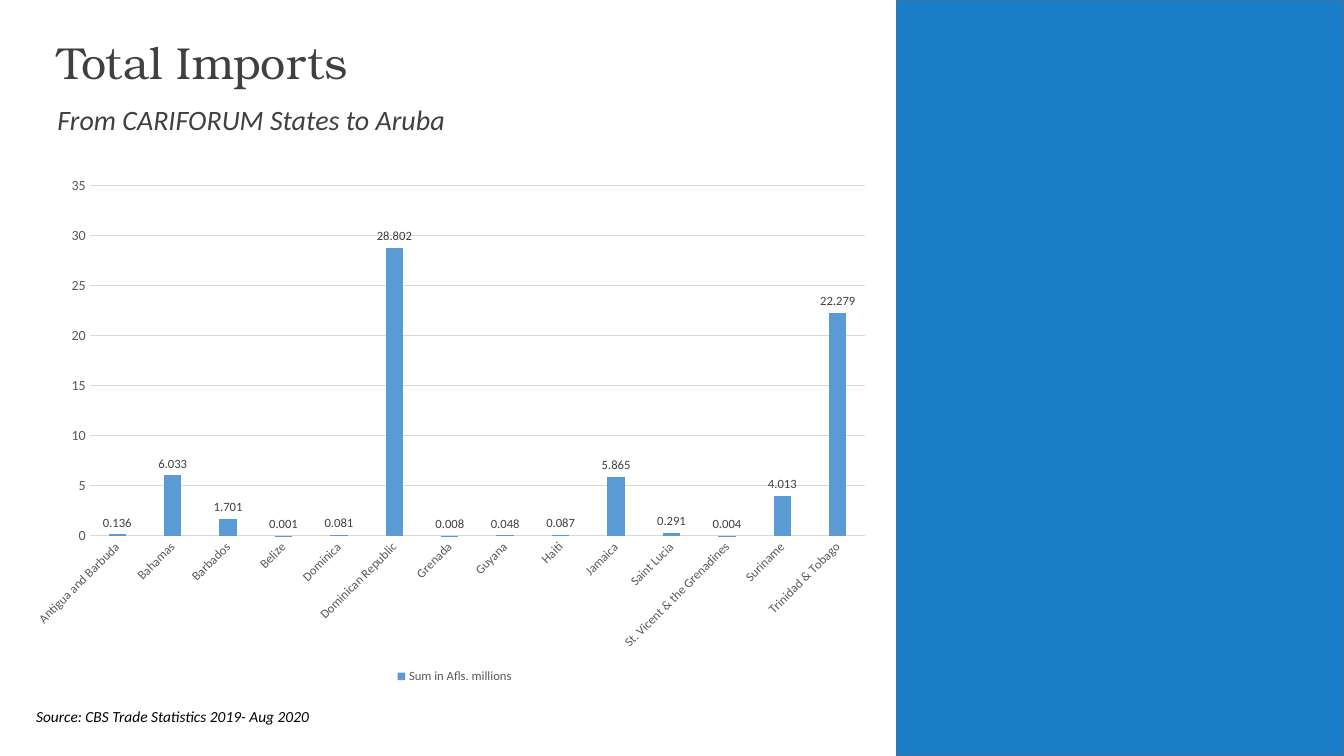
from lxml.etree import SubElement
from pptx import Presentation
from pptx.chart.data import CategoryChartData
from pptx.dml.color import RGBColor
from pptx.enum.chart import (XL_CHART_TYPE as ChartType, XL_LABEL_POSITION as LabelPosition,
                             XL_LEGEND_POSITION as LegendPosition, XL_TICK_MARK as TickMark)
from pptx.enum.shapes import MSO_SHAPE as Shape
from pptx.enum.text import MSO_ANCHOR as Anchor, MSO_AUTO_SIZE as AutoSize, PP_ALIGN as Align
from pptx.oxml.ns import qn
from pptx.util import Cm, Pt

COLORS = {"panel": "0070C0", "panel_edge": "43739E", "heading": "404040", "black": "000000",
          "axis": "595959", "grid": "D9D9D9", "bar": "5B9BD5"}
HEADING_FONT = "TeX Gyre Bonum"
BODY_FONT = "Calibri"
TITLE_ONLY = 5

IMPORTS = {
    "Antigua and Barbuda": 0.136, "Bahamas": 6.033, "Barbados": 1.701, "Belize": 0.001,
    "Dominica": 0.081, "Dominican Republic": 28.802, "Grenada": 0.008, "Guyana": 0.048,
    "Haiti": 0.087, "Jamaica": 5.865, "Saint Lucia": 0.291,
    "St. Vicent & the Grenadines": 0.004, "Suriname": 4.013, "Trinidad & Tobago": 22.279,
}


def rgb(name):
    return RGBColor.from_string(COLORS[name])


def style_font(font, size, color, name=BODY_FONT, italic=False):
    font.name, font.size, font.bold, font.italic = name, Pt(size), False, italic
    font.color.rgb = rgb(color)


def style_line(line, color, width):
    line.color.rgb = rgb(color)
    line.width = Pt(width)


class SlideBuilder:
    def __init__(self, deck):
        self.slide = deck.slides.add_slide(deck.slide_layouts[TITLE_ONLY])

    def title(self, text, left, top, width, height):
        box = self.slide.shapes.title
        box.left, box.top, box.width, box.height = map(Cm, (left, top, width, height))
        frame = box.text_frame
        frame.text = text
        frame.auto_size = AutoSize.NONE
        frame.vertical_anchor = Anchor.BOTTOM
        para = frame.paragraphs[0]
        para.alignment = Align.LEFT
        para.line_spacing = 0.9
        style_font(para.font, 32, "heading", HEADING_FONT)

    def panel(self, left, top, width, height, opacity):
        panel = self.slide.shapes.add_shape(Shape.RECTANGLE, *map(Cm, (left, top, width, height)))
        panel.shadow.inherit = False
        panel.fill.solid()
        panel.fill.fore_color.rgb = rgb("panel")
        color = panel.element.spPr.find(qn("a:solidFill"))[0]
        SubElement(color, qn("a:alpha"), val=str(opacity * 1000))
        style_line(panel.line, "panel_edge", 1)

    def text(self, text, left, top, width, height, size, color):
        box = self.slide.shapes.add_textbox(*map(Cm, (left, top, width, height)))
        frame = box.text_frame
        frame.word_wrap = True
        frame.margin_left = frame.margin_right = frame.margin_top = frame.margin_bottom = 0
        frame.text = text
        style_font(frame.paragraphs[0].font, size, color, italic=True)

    def column_chart(self, series_name, values, left, top, width, height):
        data = CategoryChartData()
        data.categories = list(values)
        data.add_series(series_name, list(values.values()))
        chart = self.slide.shapes.add_chart(
            ChartType.COLUMN_CLUSTERED, *map(Cm, (left, top, width, height)), data).chart
        chart.has_title = False
        style_font(chart.font, 10, "black")
        chart.has_legend = True
        chart.legend.position = LegendPosition.BOTTOM
        chart.legend.include_in_layout = False
        style_font(chart.legend.font, 9, "axis")
        self.style_axes(chart)
        self.style_columns(chart.plots[0])
        self.place_plot(chart, x=0.072, y=0.031, w=0.91, h=0.676)

    def style_axes(self, chart):
        for axis, size in ((chart.category_axis, 9), (chart.value_axis, 10)):
            axis.major_tick_mark = axis.minor_tick_mark = TickMark.NONE
            style_font(axis.tick_labels.font, size, "axis")
        style_line(chart.category_axis.format.line, "grid", 0.75)
        chart.element.xpath(".//c:catAx/c:txPr/a:bodyPr")[0].set("rot", "-2700000")
        axis = chart.value_axis
        axis.minimum_scale, axis.maximum_scale, axis.major_unit = 0, 35, 5
        axis.format.line.fill.background()
        style_line(axis.major_gridlines.format.line, "grid", 0.75)
        axis.tick_labels.number_format = "0"
        axis.tick_labels.number_format_is_linked = False

    def style_columns(self, plot):
        plot.vary_by_categories = False
        plot.gap_width, plot.overlap = 219, -27
        fill = plot.series[0].format.fill
        fill.solid()
        fill.fore_color.rgb = rgb("bar")
        plot.has_data_labels = True
        labels = plot.data_labels
        labels.show_value = True
        labels.position = LabelPosition.OUTSIDE_END
        labels.number_format = "0.000"
        labels.number_format_is_linked = False
        style_font(labels.font, 9, "heading")

    def place_plot(self, chart, **fractions):
        """Fix the inner plot area, given as fractions of the chart's size."""
        area = chart.element.xpath(".//c:plotArea")[0]
        for layout in area.findall(qn("c:layout")):
            area.remove(layout)
        layout = SubElement(area, qn("c:layout"))
        area.insert(0, layout)
        manual = SubElement(layout, qn("c:manualLayout"))
        settings = {"layoutTarget": "inner", "xMode": "edge", "yMode": "edge", **fractions}
        for tag, value in settings.items():
            SubElement(manual, qn(f"c:{tag}"), val=str(value))


def main():
    deck = Presentation()
    deck.slide_width, deck.slide_height = Cm(33.87), Cm(19.05)
    builder = SlideBuilder(deck)
    builder.panel(22.59, 0, 11.28, 19.05, opacity=90)
    builder.title("Total Imports", 1.19, 1.19, 31.5, 1.19)
    builder.text("From CARIFORUM States to Aruba", 1.45, 2.59, 10.26, 1.19, 20, "heading")
    builder.text("Source: CBS Trade Statistics 2019- Aug 2020", 0.91, 17.83, 13.36, 0.64, 11, "black")
    builder.column_chart("Sum in Afls. millions", IMPORTS, 0.71, 4.27, 21.49, 13.06)
    deck.save("out.pptx")


if __name__ == "__main__":
    main()
